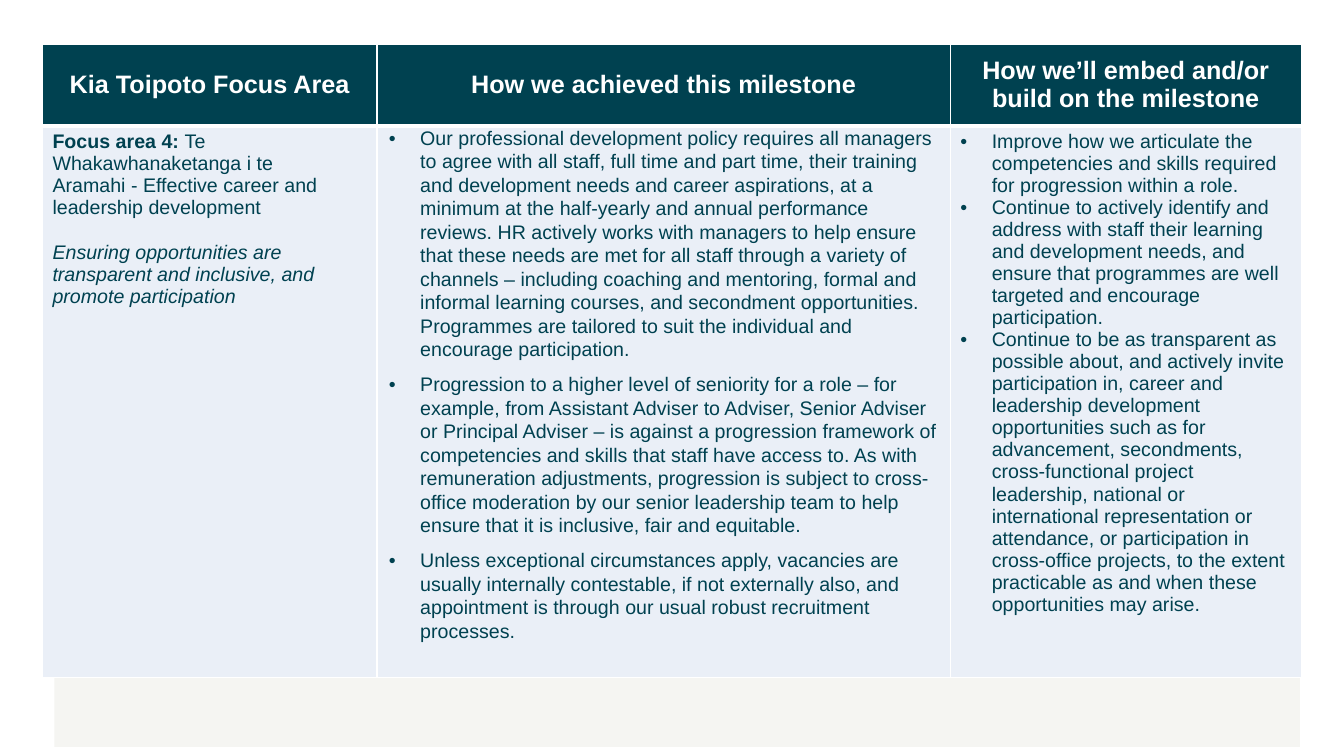
from lxml.etree import SubElement
from pptx import Presentation
from pptx.dml.color import RGBColor
from pptx.enum.shapes import MSO_SHAPE as Shape
from pptx.enum.text import MSO_ANCHOR as Anchor, PP_ALIGN as Align
from pptx.oxml.ns import qn
from pptx.util import Cm, Pt

TEAL, PALE, WHITE, STONE = "004150", "EAEFF7", "FFFFFF", "F5F5F2"
COLUMN_WIDTHS = (8.43, 14.45, 8.84)
ROW_HEIGHTS = (2.05, 13.9)

HEADINGS = (
    "Kia Toipoto Focus Area",
    "How we achieved this milestone",
    "How we’ll embed and/or build on the milestone",
)
ACHIEVED = (
    "Our professional development policy requires all managers to agree with all staff, "
    "full time and part time, their training and development needs and career aspirations, "
    "at a minimum at the half-yearly and annual performance reviews. HR actively works with "
    "managers to help ensure that these needs are met for all staff through a variety of "
    "channels – including coaching and mentoring, formal and informal learning courses, and "
    "secondment opportunities. Programmes are tailored to suit the individual and encourage "
    "participation.",
    "Progression to a higher level of seniority for a role – for example, from Assistant "
    "Adviser to Adviser, Senior Adviser or Principal Adviser – is against a progression "
    "framework of competencies and skills that staff have access to. As with remuneration "
    "adjustments, progression is subject to cross-office moderation by our senior leadership "
    "team to help ensure that it is inclusive, fair and equitable.",
    "Unless exceptional circumstances apply, vacancies are usually internally contestable, "
    "if not externally also, and appointment is through our usual robust recruitment "
    "processes.",
)
NEXT_STEPS = (
    "Improve how we articulate the competencies and skills required for progression within "
    "a role.",
    "Continue to actively identify and address with staff their learning and development "
    "needs, and ensure that programmes are well targeted and encourage participation.",
    "Continue to be as transparent as possible about, and actively invite participation in, "
    "career and leadership development opportunities such as for advancement, secondments, "
    "cross-functional project leadership, national or international representation or "
    "attendance, or participation in cross-office projects, to the extent practicable as and "
    "when these opportunities may arise.",
)


def color(value):
    return RGBColor.from_string(value)


def add_span(para, text, size=14, ink=TEAL, bold=False, italic=False):
    span = para.add_run()
    span.text = text
    font = span.font
    font.name, font.size, font.bold, font.italic = "Arial", Pt(size), bold, italic
    font.color.rgb = color(ink)


def next_para(cell):
    frame = cell.text_frame
    return frame.add_paragraph() if frame.paragraphs[0].runs else frame.paragraphs[0]


def add_bullets(cell, items, line_spacing=None, space_after=None):
    for item in items:
        para = next_para(cell)
        properties = para._p.get_or_add_pPr()
        properties.set("marL", str(Cm(0.79)))
        properties.set("indent", str(-Cm(0.79)))
        SubElement(properties, qn("a:buFont"), typeface="Arial")
        SubElement(properties, qn("a:buChar"), char="•")
        if line_spacing:
            para.line_spacing = line_spacing
        if space_after:
            para.space_after = Pt(space_after)
        add_span(para, item)


def style_cell(cell, fill, bottom_width=1):
    properties = cell._tc.get_or_add_tcPr()
    for side, width in (("L", 1), ("R", 1), ("T", 1), ("B", bottom_width)):
        line = SubElement(properties, qn(f"a:ln{side}"), w=str(Pt(width)))
        SubElement(SubElement(line, qn("a:solidFill")), qn("a:srgbClr"), val=WHITE)
    cell.fill.solid()
    cell.fill.fore_color.rgb = color(fill)


def add_band(page):
    band = page.shapes.add_shape(Shape.RECTANGLE, Cm(1.37), Cm(15.9), Cm(31.39), Cm(2.92))
    band.shadow.inherit = False
    band.fill.solid()
    band.fill.fore_color.rgb = color(STONE)
    band.line.fill.background()


def add_milestone_table(page):
    table = page.shapes.add_table(
        len(ROW_HEIGHTS), len(COLUMN_WIDTHS), Cm(1.07), Cm(1.12),
        Cm(sum(COLUMN_WIDTHS)), Cm(sum(ROW_HEIGHTS)),
    ).table
    table.horz_banding = False
    for column, width in zip(table.columns, COLUMN_WIDTHS):
        column.width = Cm(width)
    for row, height in zip(table.rows, ROW_HEIGHTS):
        row.height = Cm(height)
    return table


def fill_heading(cell, text):
    style_cell(cell, TEAL, bottom_width=3)
    cell.vertical_anchor = Anchor.MIDDLE
    para = next_para(cell)
    para.alignment = Align.CENTER
    add_span(para, text, size=18, ink=WHITE, bold=True)


def fill_focus(cell):
    para = next_para(cell)
    add_span(para, "Focus area 4: ", bold=True)
    add_span(para, "Te Whakawhanaketanga i te")
    add_span(next_para(cell), "Aramahi - Effective career and leadership development")
    para = next_para(cell)
    para.space_before = Pt(16)
    add_span(para, "Ensuring opportunities are transparent and inclusive, "
                   "and promote participation", italic=True)


def main():
    deck = Presentation()
    deck.slide_width, deck.slide_height = Cm(33.87), Cm(19.05)
    page = deck.slides.add_slide(deck.slide_layouts[6])
    add_band(page)
    table = add_milestone_table(page)
    for index, heading in enumerate(HEADINGS):
        fill_heading(table.cell(0, index), heading)
        style_cell(table.cell(1, index), PALE)
    focus, achieved, next_steps = table.rows[1].cells
    fill_focus(focus)
    achieved.margin_left = achieved.margin_right = Cm(0.3)
    achieved.margin_top = achieved.margin_bottom = Cm(0)
    add_bullets(achieved, ACHIEVED, line_spacing=1.07, space_after=8)
    add_bullets(next_steps, NEXT_STEPS)
    deck.save("out.pptx")


if __name__ == "__main__":
    main()
